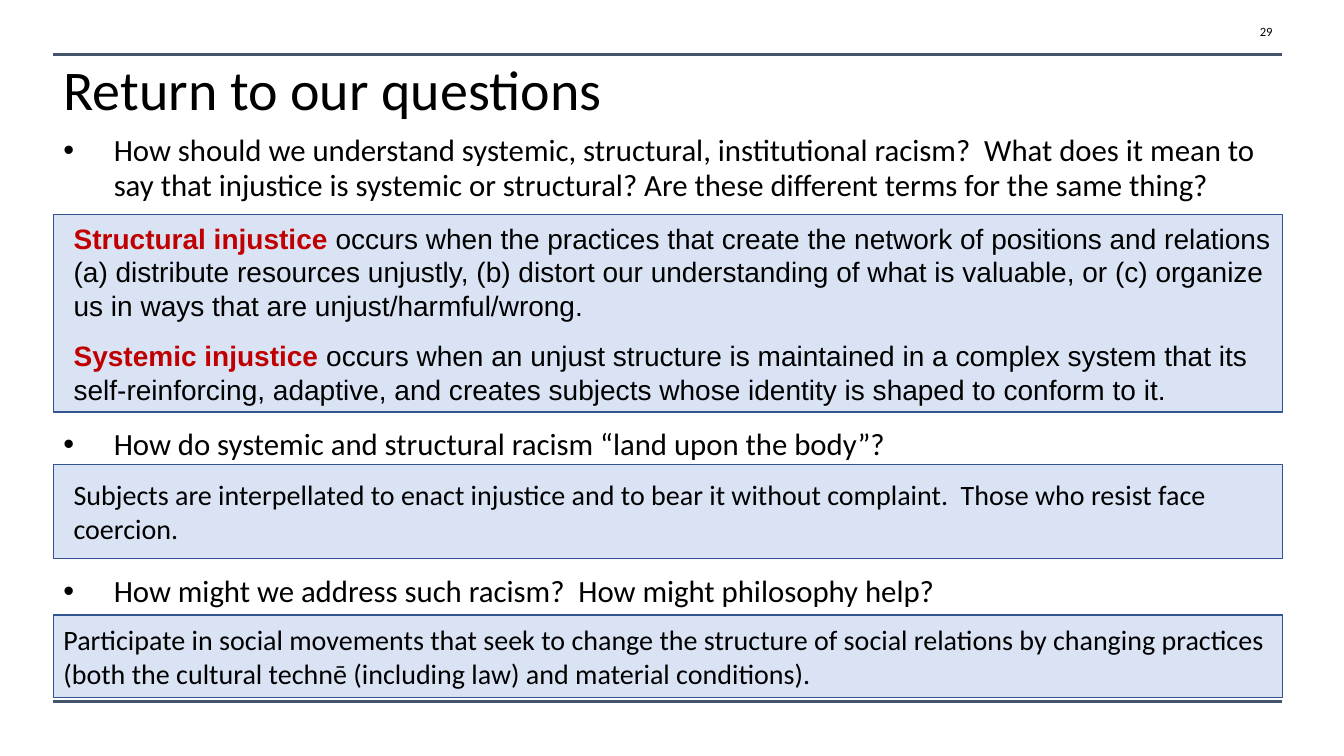
from lxml import etree
from pptx import Presentation
from pptx.dml.color import RGBColor
from pptx.enum import shapes, text
from pptx.oxml import ns
from pptx.util import Inches, Pt

HUES = {"ink": "000000", "rule": "44546A", "fill": "DAE3F3",
        "edge": "325491", "key": "C00000"}
LEFT, WIDTH = 0.53, 12.19


class Deck:
    def __init__(self):
        self.prs = Presentation()
        self.prs.slide_width = Inches(13.33)
        self.prs.slide_height = Inches(7.5)
        self.slide = self.prs.slides.add_slide(self.prs.slide_layouts[5])

    def hue(self, name):
        return RGBColor.from_string(HUES[name])

    def style(self, para, size, face="Calibri"):
        para.font.size = Pt(size)
        para.font.name = face
        para.font.color.rgb = self.hue("ink")

    def frame(self, shape, anchor=text.MSO_ANCHOR.MIDDLE):
        body = shape.text_frame
        body.word_wrap = True
        body.auto_size = text.MSO_AUTO_SIZE.NONE
        body.vertical_anchor = anchor
        return body

    def label(self, words, x, y, w, h):
        return self.slide.shapes.add_textbox(
            Inches(x), Inches(y), Inches(w), Inches(h))

    def title(self, words):
        head = self.slide.shapes.title
        head.left, head.top = Inches(LEFT), Inches(0.58)
        head.width, head.height = Inches(WIDTH), Inches(0.67)
        para = self.frame(head).paragraphs[0]
        para.text = words
        para.alignment = text.PP_ALIGN.LEFT
        para.line_spacing = 0.9
        self.style(para, 40)

    def rule(self, y):
        line = self.slide.shapes.add_connector(
            shapes.MSO_CONNECTOR.STRAIGHT, Inches(LEFT), Inches(y),
            Inches(LEFT + WIDTH), Inches(y))
        line.line.color.rgb = self.hue("rule")
        line.line.width = Pt(2.25)
        etree.SubElement(line._element.spPr, ns.qn("a:effectLst"))

    def number(self, words):
        box = self.label(words, 12.02, 0.11, 0.7, 0.4)
        para = self.frame(box).paragraphs[0]
        para.text = words
        para.alignment = text.PP_ALIGN.RIGHT
        self.style(para, 9)

    def ask(self, words, y, h):
        box = self.label(words, LEFT, y, WIDTH, h)
        para = self.frame(box, text.MSO_ANCHOR.TOP).paragraphs[0]
        para.text = words
        para.line_spacing = 0.95
        props = para._p.get_or_add_pPr()
        props.set("marL", str(Inches(0.5)))
        props.set("indent", str(-Inches(0.5)))
        etree.SubElement(props, ns.qn("a:buFont")).set("typeface", "Arial")
        etree.SubElement(props, ns.qn("a:buChar")).set("char", "•")
        self.style(para, 22)

    def answer(self, parts, y, h, face="Calibri", inset=0.1):
        """Each part is a pair: red key term, then plain text."""
        box = self.slide.shapes.add_shape(
            shapes.MSO_SHAPE.RECTANGLE, Inches(LEFT), Inches(y),
            Inches(WIDTH), Inches(h))
        box.shadow.inherit = False
        box.fill.solid()
        box.fill.fore_color.rgb = self.hue("fill")
        box.line.color.rgb = self.hue("edge")
        box.line.width = Pt(1)
        body = self.frame(box)
        body.margin_left = Inches(0.1 + inset)
        for i, (term, rest) in enumerate(parts):
            para = body.add_paragraph() if i else body.paragraphs[0]
            para.alignment = text.PP_ALIGN.LEFT
            if i:
                para.space_before = Pt(12)
            self.style(para, 20, face)
            if term:
                key = para.add_run()
                key.text = term
                key.font.bold = True
                key.font.color.rgb = self.hue("key")
            para.add_run().text = rest


def main():
    deck = Deck()

    # Frame of the page
    for y in (0.54, 6.96):
        deck.rule(y)
    deck.number("29")
    deck.title("Return to our questions")

    # Questions
    deck.ask("How should we understand systemic, structural, institutional "
             "racism?  What does it mean to say that injustice is systemic "
             "or structural? Are these different terms for the same thing?",
             1.27, 0.84)
    deck.ask("How do systemic and structural racism “land upon the body”?",
             4.19, 0.42)
    deck.ask("How might we address such racism?  How might philosophy help?",
             5.65, 0.42)

    # Answers
    deck.answer([
        ("Structural injustice",
         " occurs when the practices that create the network of positions "
         "and relations (a) distribute resources unjustly, (b) distort our "
         "understanding of what is valuable, or (c) organize us in ways "
         "that are unjust/harmful/wrong."),
        ("Systemic injustice",
         " occurs when an unjust structure is maintained in a complex system "
         "that its self-reinforcing, adaptive, and creates subjects whose "
         "identity is shaped to conform to it.")], 2.13, 1.96, "Arial")
    deck.answer([
        ("", "Subjects are interpellated to enact injustice and to bear it "
         "without complaint.  Those who resist face coercion.")], 4.61, 0.93)
    deck.answer([
        ("", "Participate in social movements that seek to change the "
         "structure of social relations by changing practices (both the "
         "cultural technē (including law) and material conditions).")],
        6.1, 0.82, inset=0)

    deck.prs.save("out.pptx")


if __name__ == "__main__":
    main()
